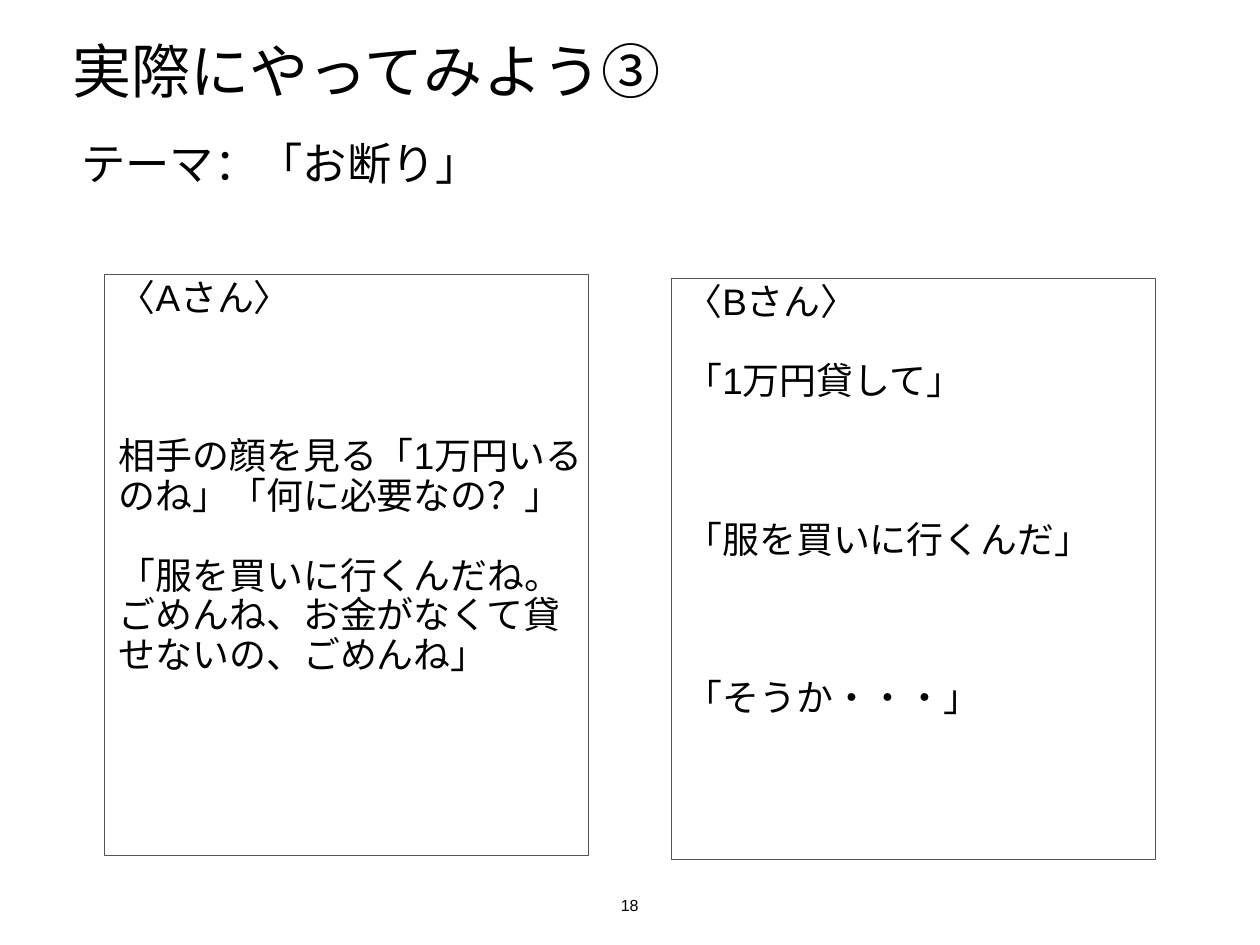
from lxml.etree import SubElement
from pptx import Presentation
from pptx.dml.color import RGBColor
from pptx.enum.text import MSO_ANCHOR as Anchor, MSO_AUTO_SIZE as AutoSize, PP_ALIGN as Align
from pptx.oxml.ns import qn
from pptx.util import Cm, Pt

INSET = Cm(0.15)


def color(value):
    return RGBColor.from_string(value)


def write(box, items, size, line_spacing=0.9, indent=0.25, align=Align.LEFT,
          anchor=Anchor.TOP, wrap=True):
    """Write (text, space before in points) pairs as paragraphs."""
    frame = box.text_frame
    frame.auto_size = AutoSize.NONE
    frame.word_wrap = wrap
    frame.vertical_anchor = anchor
    frame.margin_left = frame.margin_right = INSET
    frame.margin_top = frame.margin_bottom = INSET
    for number, (text, before) in enumerate(items):
        para = frame.add_paragraph() if number else frame.paragraphs[0]
        para.alignment = align
        para.line_spacing = line_spacing
        para.space_before = Pt(before)
        props = para._p.get_or_add_pPr()
        props.set("marL", str(Cm(indent)))
        props.set("indent", "0")
        SubElement(props, qn("a:buNone"))
        span = para.add_run()
        span.text = text
        span.font.name = "Arial"
        span.font.size = Pt(size)
        span.font.bold = False
        span.font.color.rgb = color("000000")
        SubElement(span._r.get_or_add_rPr(), qn("a:ea"), typeface="Arial")


deck = Presentation()
deck.slide_width, deck.slide_height = Cm(36.12), Cm(27.1)
page = deck.slides.add_slide(deck.slide_layouts[3])
title, theme, speaker_a = page.placeholders
speaker_b = page.shapes.add_textbox(0, 0, 0, 0)
page_number = page.shapes.add_textbox(0, 0, 0, 0)

# Positions: left, top, width, height
for box, place in (
    (title, (1.93, 1.22, 32.23, 2.69)),
    (theme, (1.93, 3.94, 32.23, 1.85)),
    (speaker_a, (3, 7.87, 13.87, 16.66)),
    (speaker_b, (19.25, 7.98, 13.87, 16.66)),
    (page_number, (17.63, 25.6, 0.84, 0.79)),
):
    box.left, box.top, box.width, box.height = map(Cm, place)

# Title and theme
write(title, [("実際にやってみよう③", 0)], 48, line_spacing=0.8, indent=0)
write(theme, [("テーマ：「お断り」", 0)], 36)

# Dialogue boxes: a wide gap leaves room for the other speaker's turn
GAP, WIDE_GAP = 32, 96.4
write(speaker_a, [
    ("〈Aさん〉", 0),
    ("相手の顔を見る「1万円いるのね」「何に必要なの？」", WIDE_GAP),
    ("「服を買いに行くんだね。ごめんね、お金がなくて貸せないの、ごめんね」", GAP),
], 30)
write(speaker_b, [
    ("〈Bさん〉", 0),
    ("「1万円貸して」", GAP),
    ("「服を買いに行くんだ」", WIDE_GAP),
    ("「そうか・・・」", WIDE_GAP),
], 30)
for box in (speaker_a, speaker_b):
    box.line.color.rgb = color("535353")
    box.line.width = Pt(1)

# Page number
write(page_number, [("18", 0)], 13, line_spacing=1.0, indent=0,
      align=Align.CENTER, anchor=Anchor.BOTTOM, wrap=False)

deck.save("out.pptx")
